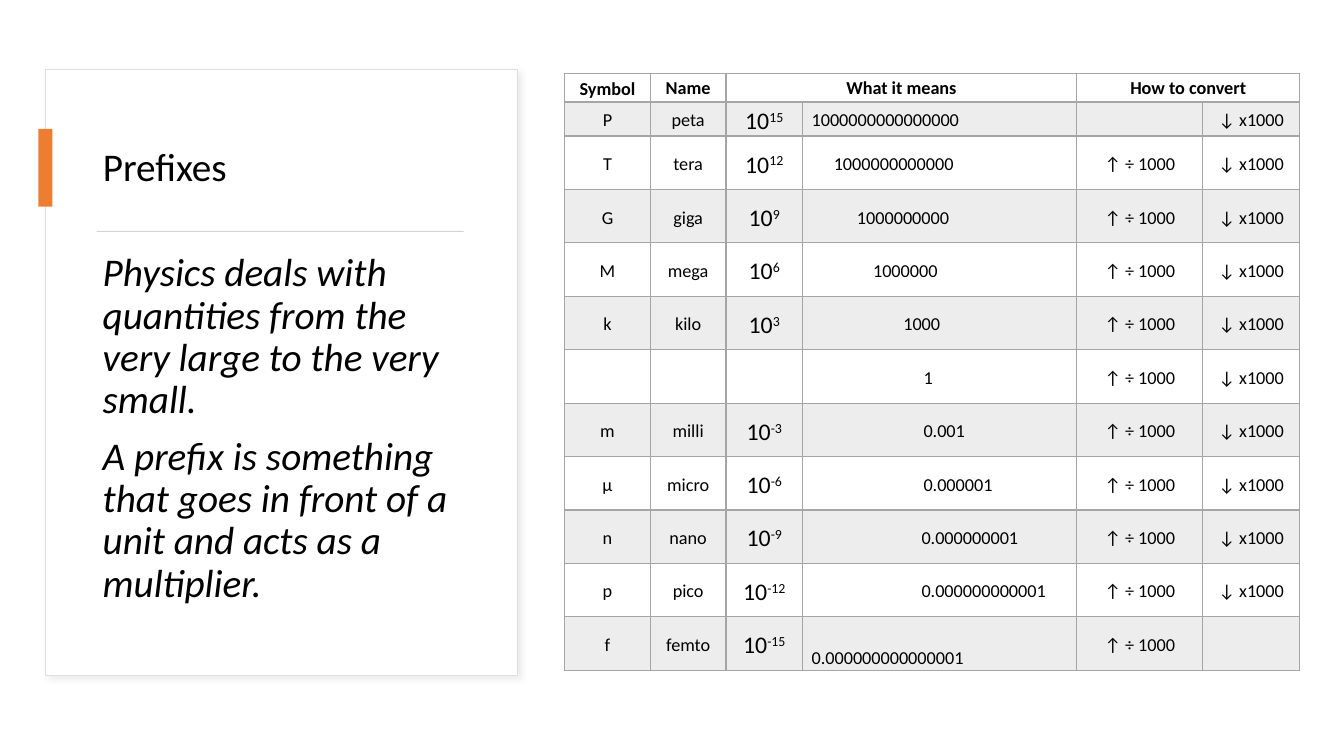
from lxml import etree
from pptx import Presentation
from pptx import util as u
from pptx.dml.color import RGBColor
from pptx.enum import shapes, text
from pptx.oxml import ns

PX = 9144
FONT = "Calibri"
BLACK, WHITE, GREY = "000000", "FFFFFF", "A5A5A5"
HEADINGS = {0: "Symbol", 1: "Name", 2: "What it means", 4: "How to convert"}
COLUMNS = [85, 75, 76, 272, 125, 96]
HEADING_HEIGHT, FIRST_HEIGHT, ROW_HEIGHT = 28, 34, 53
PREFIXES = [
    ("P", "peta", 0), ("T", "tera", 22), ("G", "giga", 45), ("M", "mega", 61),
    ("k", "kilo", 91), ("", "", 111), ("m", "milli", 111), ("μ", "micro", 111),
    ("n", "nano", 109), ("p", "pico", 109), ("f", "femto", 109),
]


def px(*lengths):
    return [u.Emu(length * PX) for length in lengths]


def colour(value):
    return RGBColor.from_string(value)


def child(parent, tag, **attributes):
    return etree.SubElement(parent, ns.qn(tag), attributes)


def style(paragraph, size, spacing, bold=False, italic=False):
    paragraph.line_spacing = spacing
    font = paragraph.font
    font.name, font.size = FONT, u.Pt(size)
    font.bold, font.italic = bold, italic
    font.color.rgb = colour(BLACK)


def add_block(slide, box, fill):
    block = slide.shapes.add_shape(shapes.MSO_SHAPE.RECTANGLE, *px(*box))
    block.shadow.inherit = False
    block.fill.solid()
    block.fill.fore_color.rgb = colour(fill)
    block.line.fill.background()
    return block


def add_card(slide, box):
    left, top, width, height = box
    card = add_block(slide, box, WHITE)
    card.line.color.rgb = colour("DEDEDE")
    card.line.width = u.Pt(0.75)
    effects = card.element.spPr.find(ns.qn("a:effectLst"))
    shadow = child(effects, "a:outerShdw", blurRad=str(u.Pt(4)), dist=str(u.Pt(3)),
                   dir="2700000", algn="tl", rotWithShape="0")
    child(child(shadow, "a:srgbClr", val="D9D9D9"), "a:alpha", val="50000")

    title = slide.shapes.title
    title.element.addprevious(card.element)
    title.left, title.top, title.width, title.height = px(left + 47, top + 38, 373, 121)
    title.text_frame.text = "Prefixes"
    title.text_frame.vertical_anchor = text.MSO_ANCHOR.MIDDLE
    heading = title.text_frame.paragraphs[0]
    heading.alignment = text.PP_ALIGN.LEFT
    style(heading, 28, 0.9)

    add_block(slide, (left - 7, top + 59, 14, 77), "ED7D31")
    add_block(slide, (left + 51, top + 160, 364, 1), "D5D5D5")

    body = slide.shapes.add_textbox(*px(left + 47, top + 177, 373, 389)).text_frame
    body.word_wrap = True
    body.text = ("Physics deals with quantities from the very large to the very small.\n"
                 "A prefix is something that goes in front of a unit and acts as a multiplier.")
    for paragraph in body.paragraphs:
        paragraph.space_before = u.Pt(10)
        style(paragraph, 28, 0.9, italic=True)


def format_cell(cell, shaded, bottom=1):
    cell.margin_left, cell.margin_right = px(9, 9)
    cell.margin_top = cell.margin_bottom = 0
    cell.vertical_anchor = text.MSO_ANCHOR.MIDDLE
    properties = cell._tc.get_or_add_tcPr()
    for side, weight in (("L", 1), ("R", 1), ("T", 1), ("B", bottom)):
        edge = child(properties, f"a:ln{side}", w=str(u.Pt(weight)))
        child(child(edge, "a:solidFill"), "a:srgbClr", val=GREY)
    if shaded:
        cell.fill.solid()
        cell.fill.fore_color.rgb = colour(GREY)
        child(properties.find(ns.qn("a:solidFill"))[0], "a:alpha", val="20000")
    else:
        cell.fill.background()


def write(cell, words, size=13, bold=False):
    paragraph = cell.text_frame.paragraphs[0]
    paragraph.alignment = text.PP_ALIGN.CENTER
    style(paragraph, size, 1.15, bold)
    if words:
        paragraph.add_run().text = words
    return paragraph


def write_power(cell, exponent):
    paragraph = write(cell, "10", 17)
    raised = paragraph.add_run()
    raised.text = str(exponent)
    raised._r.get_or_add_rPr().set("baseline", "30000")


def write_number(cell, exponent, indent):
    number = f"{10 ** exponent}" if exponent >= 0 else f"{10.0 ** exponent:.{-exponent}f}"
    paragraph = write(cell, "\t" + number if indent else number)
    paragraph.alignment = text.PP_ALIGN.LEFT
    if indent:
        tabs = etree.Element(ns.qn("a:tabLst"))
        child(tabs, "a:tab", pos=str(indent * PX), algn="l")
        paragraph._p.pPr.find(ns.qn("a:defRPr")).addprevious(tabs)


def add_prefix_table(slide, box):
    frame = slide.shapes.add_table(len(PREFIXES) + 1, len(COLUMNS), *px(*box))
    table = frame.table
    table.first_row = table.horz_banding = False
    for column, width in zip(table.columns, px(*COLUMNS)):
        column.width = width
    heights = [HEADING_HEIGHT, FIRST_HEIGHT] + [ROW_HEIGHT] * (len(PREFIXES) - 1)
    for row, height in zip(table.rows, px(*heights)):
        row.height = height

    for index in range(len(COLUMNS)):
        format_cell(table.cell(0, index), False, bottom=2)
    for index, heading in HEADINGS.items():
        cell = table.cell(0, index)
        write(cell, heading, bold=True)
        if index:
            cell.vertical_anchor = text.MSO_ANCHOR.TOP
    for index in (2, 4):
        table.cell(0, index).merge(table.cell(0, index + 1))

    last = len(PREFIXES) - 1
    for index, (symbol, name, indent) in enumerate(PREFIXES):
        exponent = 15 - 3 * index
        cells = [table.cell(index + 1, column) for column in range(len(COLUMNS))]
        for cell in cells:
            format_cell(cell, index % 2 == 0)
        write(cells[0], symbol)
        write(cells[1], name)
        if exponent:
            write_power(cells[2], exponent)
        write_number(cells[3], exponent, indent)
        write(cells[4], "↑ ÷ 1000" if index > 0 else "")
        write(cells[5], "↓ x1000" if index < last else "")


def main():
    deck = Presentation()
    deck.slide_width, deck.slide_height = px(1333, 750)
    slide = deck.slides.add_slide(deck.slide_layouts[5])
    add_card(slide, (45, 69, 468, 601))
    add_prefix_table(slide, (560, 73, sum(COLUMNS), 594))
    deck.save("out.pptx")


if __name__ == "__main__":
    main()
